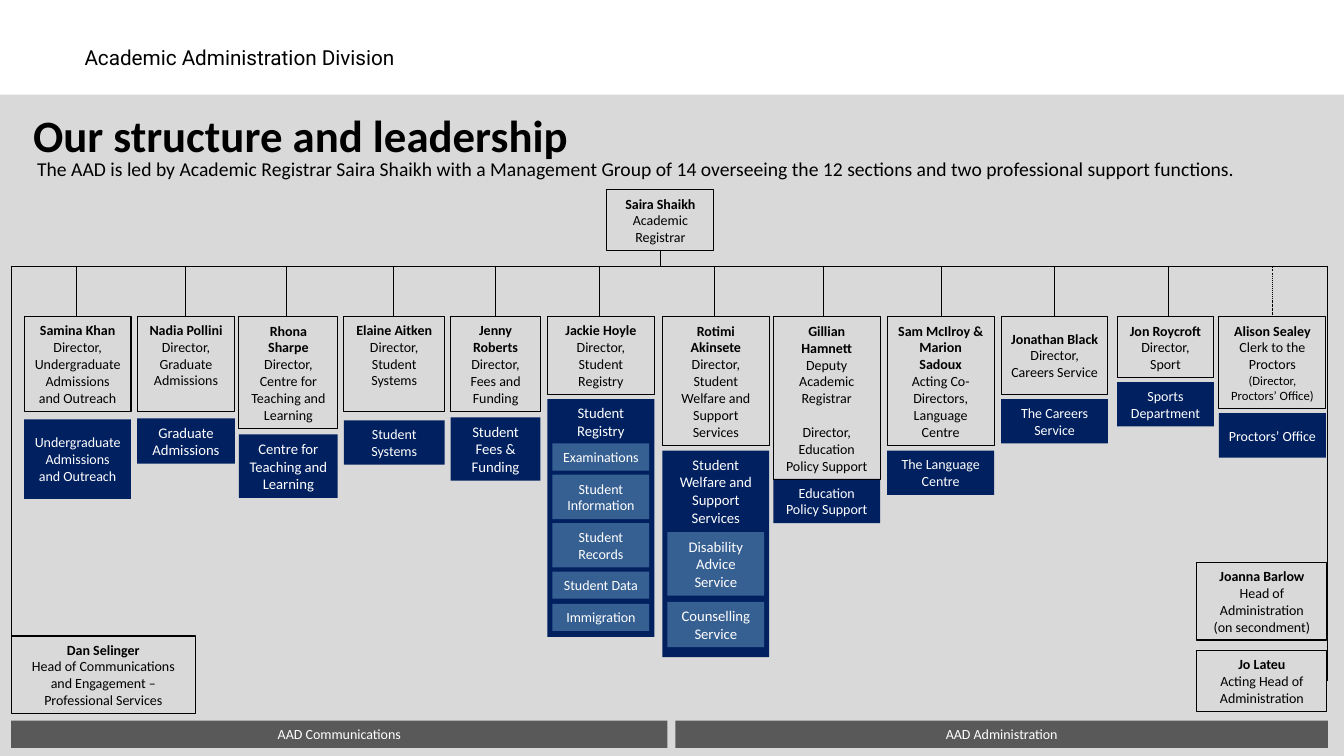
"""Build the division's structure chart slide."""
from dataclasses import dataclass
from typing import Optional

from lxml.etree import SubElement
from pptx import Presentation
from pptx.dml.color import RGBColor
from pptx.enum.dml import MSO_LINE as Dash
from pptx.enum.shapes import MSO_CONNECTOR as Link, MSO_SHAPE as Form
from pptx.enum.text import MSO_ANCHOR as Anchor, PP_ALIGN as Align
from pptx.oxml.ns import qn
from pptx.util import Emu, Pt

PX = 9144
BLACK = RGBColor(0x00, 0x00, 0x00)
WHITE = RGBColor(0xFF, 0xFF, 0xFF)
PALE = RGBColor(0xD9, 0xD9, 0xD9)
NAVY = RGBColor(0x00, 0x20, 0x60)
BLUE = RGBColor(0x37, 0x60, 0x92)
GREY = RGBColor(0x59, 0x59, 0x59)
RAIL, ROW = 264, 314
LEFT, RIGHT = 11, 1316


@dataclass
class Box:
    left: int
    top: int
    width: int
    height: int
    text: str
    size: float = 10
    fill: Optional[RGBColor] = None
    anchor: Anchor = Anchor.MIDDLE


@dataclass
class Label:
    left: int
    top: int
    width: int
    height: int
    text: str
    size: float
    face: str = "Calibri"
    bold: bool = False


@dataclass
class Team:
    top: int
    height: int
    text: str
    size: float = 10


@dataclass
class Column:
    left: int
    width: int
    height: int
    stem: int
    staff: str
    unit: Team
    teams: tuple[Team, ...] = ()
    note: str = ""
    gap: float = 0
    dash: Optional[Dash] = None
    anchor: Anchor = Anchor.MIDDLE


@dataclass
class Line:
    x1: int
    y1: int
    x2: int
    y2: int
    dash: Optional[Dash] = None


LABELS = [
    Label(74, 39, 778, 35, "Academic Administration Division", 14.8, "Roboto"),
    Label(23, 102, 1234, 64, "Our structure and leadership", 32, bold=True),
    Label(27, 151, 1296, 34, "The AAD is led by Academic Registrar Saira Shaikh with a "
          "Management Group of 14 overseeing the 12 sections and two professional "
          "support functions.", 14),
]

COLUMNS = [
    Column(24, 106, 94, 76, "Samina Khan\nDirector, Undergraduate Admissions and Outreach",
           Team(416, 79, "Undergraduate Admissions and Outreach")),
    Column(136, 97, 94, 184, "Nadia Pollini\nDirector, Graduate Admissions",
           Team(415, 45, "Graduate Admissions", 10.5), anchor=Anchor.TOP),
    Column(237, 98, 111, 284, "Rhona Sharpe\nDirector, Centre for Teaching and Learning",
           Team(431, 63, "Centre for Teaching and Learning", 10.5)),
    Column(341, 100, 94, 390, "Elaine Aitken\nDirector,\nStudent Systems",
           Team(417, 44, "Student\nSystems"), anchor=Anchor.TOP),
    Column(447, 89, 94, 491, "Jenny Roberts\nDirector, Fees and Funding",
           Team(414, 63, "Student Fees & Funding", 10.5)),
    Column(543, 106, 77, 594, "Jackie Hoyle\nDirector, Student Registry",
           Team(396, 236, "Student Registry", 10.5),
           (Team(440, 27, "Examinations"), Team(471, 44, "Student Information"),
            Team(519, 44, "Student Records"), Team(567, 27, "Student Data"),
            Team(599, 27, "Immigration"))),
    Column(657, 106, 128, 708,
           "Rotimi Akinsete\nDirector, Student Welfare and Support Services",
           Team(447, 205, "Student Welfare and Support Services", 10.5),
           (Team(528, 63, "Disability Advice Service", 10.5),
            Team(597, 45, "Counselling Service", 10.5))),
    Column(767, 106, 162, 816, "Gillian Hamnett\nDeputy Academic Registrar",
           Team(475, 44, "Education Policy Support"),
           note="Director, Education Policy Support", gap=12),
    Column(880, 106, 128, 933,
           "Sam McIlroy & Marion Sadoux\nActing Co-Directors, Language Centre",
           Team(447, 44, "The Language Centre")),
    Column(993, 106, 77, 1046, "Jonathan Black\nDirector, Careers Service",
           Team(396, 44, "The Careers Service")),
    Column(1108, 96, 61, 1159, "Jon Roycroft\nDirector,\nSport",
           Team(379, 44, "Sports Department")),
    Column(1209, 106, 91, 1262, "Alison Sealey\nClerk to the Proctors",
           Team(410, 44, "Proctors’ Office"),
           note="(Director, Proctors’ Office)", dash=Dash.DASH_DOT),
]

OTHERS = [
    Box(602, 188, 106, 61, "Saira Shaikh\nAcademic Registrar"),
    Box(LEFT, 631, 183, 77, "Dan Selinger\nHead of Communications and Engagement – "
        "Professional Services"),
    Box(1187, 558, 129, 77, "Joanna Barlow\nHead of Administration\n(on secondment)"),
    Box(1187, 645, 129, 61, "Jo Lateu\nActing Head of Administration"),
    Box(LEFT, 715, 651, 27, "AAD Communications", fill=GREY),
    Box(670, 715, 647, 27, "AAD Administration", fill=GREY),
]

LINES = [
    Line(LEFT, RAIL, RIGHT, RAIL),
    Line(LEFT, RAIL, LEFT, 643),
    Line(RIGHT, RAIL, RIGHT, 676),
    Line(655, 248, 655, RAIL),
]


def scale(*vals: int) -> list[Emu]:
    return [Emu(val * PX) for val in vals]


def write(para, text: str, color: RGBColor, **form) -> None:
    run = para.add_run()
    run.text = text
    run.font.color.rgb = color
    for key, val in form.items():
        setattr(run.font, key, val)


def label(shapes, item: Label) -> None:
    frame = shapes.add_textbox(
        *scale(item.left, item.top, item.width, item.height)).text_frame
    frame.word_wrap = True
    write(frame.paragraphs[0], item.text, BLACK,
          size=Pt(item.size), name=item.face, bold=item.bold)


def panel(shapes, box: Box):
    shape = shapes.add_shape(
        Form.RECTANGLE, *scale(box.left, box.top, box.width, box.height))
    shape.shadow.inherit = False
    if box.fill is None:
        shape.fill.background()
        shape.line.color.rgb = BLACK
        shape.line.width = Pt(0.75)
    else:
        shape.fill.solid()
        shape.fill.fore_color.rgb = box.fill
        shape.line.fill.background()
    frame = shape.text_frame
    for key, val in {"word_wrap": True, "vertical_anchor": box.anchor}.items():
        setattr(frame, key, val)
    for num, text in enumerate(box.text.split("\n") if box.text else []):
        para = frame.add_paragraph() if num else frame.paragraphs[0]
        para.alignment = Align.CENTER
        write(para, text, WHITE if box.fill else BLACK, size=Pt(box.size),
              name="Calibri", bold=box.fill is None and num == 0)
    return shape


def rule(shapes, line: Line) -> None:
    link = shapes.add_connector(
        Link.STRAIGHT, *scale(line.x1, line.y1, line.x2, line.y2))
    link.line.color.rgb = BLACK
    link.line.width = Pt(0.25)
    if line.dash:
        link.line.dash_style = line.dash
    SubElement(link._element.spPr, qn("a:effectLst"))


def column(shapes, col: Column) -> None:
    unit = col.unit
    panel(shapes, Box(col.left, unit.top, col.width, unit.height, unit.text, unit.size,
                      NAVY, Anchor.TOP if col.teams else Anchor.MIDDLE))
    for team in col.teams:
        panel(shapes, Box(col.left + 5, team.top, col.width - 10, team.height,
                          team.text, team.size, BLUE))
    shape = panel(shapes, Box(col.left, ROW, col.width, col.height, col.staff,
                              anchor=col.anchor))
    if col.note:
        para = shape.text_frame.add_paragraph()
        for key, val in {"alignment": Align.CENTER, "space_before": Pt(col.gap)}.items():
            setattr(para, key, val)
        write(para, col.note, BLACK, size=Pt(10 if col.gap else 9), name="Calibri")
    rule(shapes, Line(col.stem, RAIL, col.stem, ROW, col.dash))


def main() -> None:
    deck = Presentation()
    deck.slide_width, deck.slide_height = scale(1333, 750)
    shapes = deck.slides.add_slide(deck.slide_layouts[6]).shapes
    panel(shapes, Box(0, 94, 1333, 656, "", fill=PALE))
    for draw, items in ((label, LABELS), (column, COLUMNS), (panel, OTHERS), (rule, LINES)):
        for item in items:
            draw(shapes, item)
    deck.save("out.pptx")


if __name__ == "__main__":
    main()
